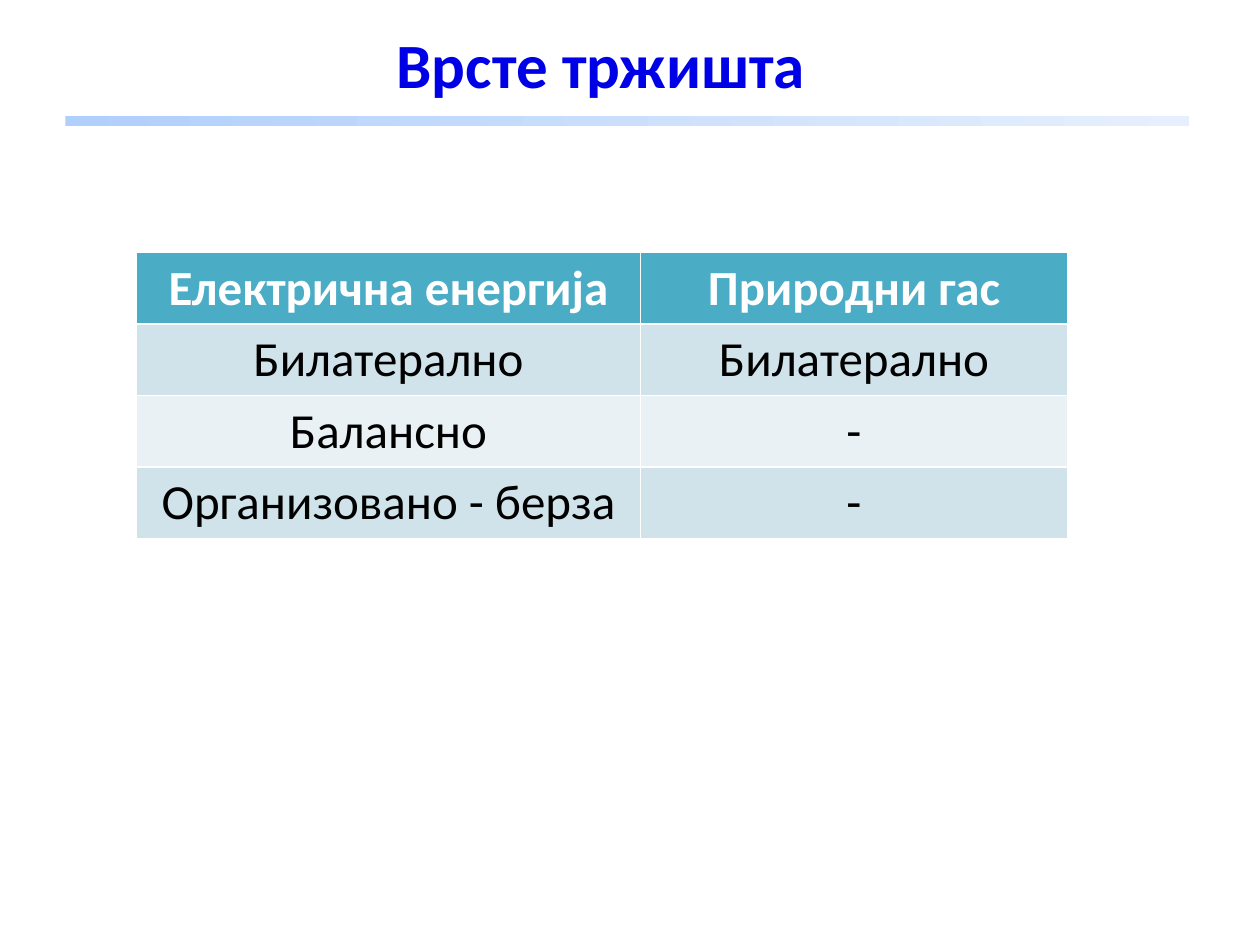
"""Build a slide comparing the market types for electricity and natural gas."""
from pptx import Presentation
from pptx.dml.color import RGBColor
from pptx.enum.shapes import MSO_SHAPE
from pptx.enum.text import MSO_ANCHOR, PP_ALIGN
from pptx.util import Cm, Pt

TITLE = "Врсте тржишта"
MARKETS = [
    ("Електрична енергија", "Природни гас"),
    ("Билатерално", "Билатерално"),
    ("Балансно", "-"),
    ("Организовано - берза", "-"),
]
COLUMN_WIDTHS = (10.16, 8.61)
ROW_HEIGHT = 1.44
HEADER_FILL = "4BACC6"
BAND_FILLS = ("E9F1F5", "D0E3EA")
RULE_COLORS = ("B0CFFB", "E6EFFD")


def color(value):
    return RGBColor.from_string(value)


def write(frame, text, size, shade, bold):
    para = frame.paragraphs[0]
    para.alignment = PP_ALIGN.CENTER
    span = para.add_run()
    span.text = text
    span.font.name = "Calibri"
    span.font.size = Pt(size)
    span.font.bold = bold
    span.font.color.rgb = color(shade)


def add_title(page):
    box = page.shapes.add_textbox(Cm(1.32), Cm(0.43), Cm(21.59), Cm(1.7))
    frame = box.text_frame
    frame.word_wrap = True
    frame.vertical_anchor = MSO_ANCHOR.MIDDLE
    write(frame, TITLE, 36, "0000E6", True)


def add_rule(page):
    rule = page.shapes.add_shape(MSO_SHAPE.RECTANGLE, Cm(1.32), Cm(2.33), Cm(22.65), Cm(0.21))
    rule.shadow.inherit = False
    rule.line.fill.background()
    rule.fill.gradient()
    rule.fill.gradient_angle = 0
    for stop, shade in zip(rule.fill.gradient_stops, RULE_COLORS):
        stop.color.rgb = color(shade)


def add_markets(page):
    table = page.shapes.add_table(
        len(MARKETS), len(COLUMN_WIDTHS), Cm(2.75), Cm(5.09),
        Cm(sum(COLUMN_WIDTHS)), Cm(ROW_HEIGHT * len(MARKETS)),
    ).table
    for column, width in zip(table.columns, COLUMN_WIDTHS):
        column.width = Cm(width)
    for row, texts in enumerate(MARKETS):
        header = row == 0
        for column, text in enumerate(texts):
            cell = table.cell(row, column)
            cell.fill.solid()
            cell.fill.fore_color.rgb = color(HEADER_FILL if header else BAND_FILLS[row % 2])
            write(cell.text_frame, text, 28, "FFFFFF" if header else "000000", header)


def main():
    deck = Presentation()
    deck.slide_width, deck.slide_height = Cm(25.4), Cm(19.05)
    page = deck.slides.add_slide(deck.slide_layouts[6])
    add_title(page)
    add_rule(page)
    add_markets(page)
    deck.save("out.pptx")


if __name__ == "__main__":
    main()
